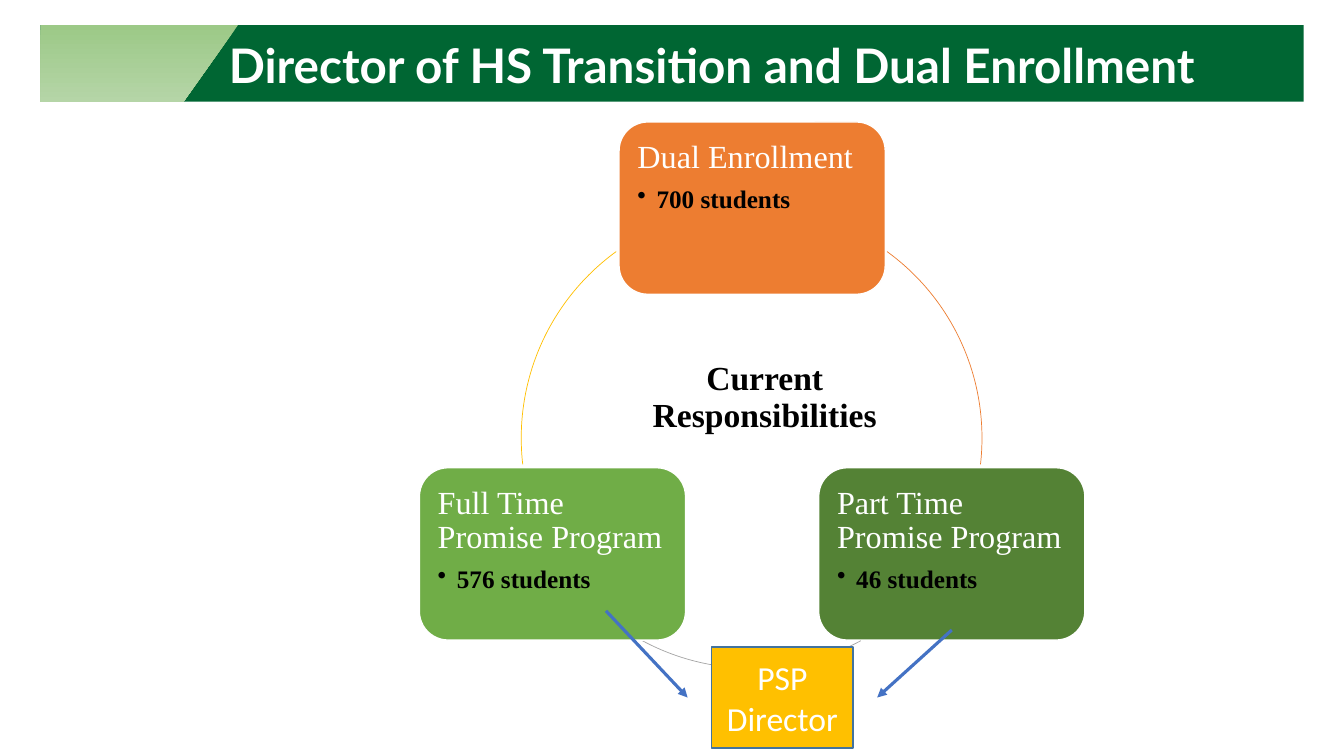
from lxml.etree import SubElement
from pptx import Presentation
from pptx.dml.color import RGBColor
from pptx.enum.shapes import MSO_CONNECTOR, MSO_SHAPE
from pptx.enum.text import MSO_ANCHOR, PP_ALIGN
from pptx.oxml.ns import qn
from pptx.util import Emu, Pt

EMU_PER_PX = 9144  # 100 px to the inch

WHITE = RGBColor(0xFF, 0xFF, 0xFF)
BLACK = RGBColor(0x00, 0x00, 0x00)
BANNER_GREEN = RGBColor(0x00, 0x66, 0x33)
PALE_GREEN = RGBColor(0xB5, 0xD5, 0xA7)
SOFT_GREEN = RGBColor(0x9C, 0xC9, 0x87)
ORANGE = RGBColor(0xED, 0x7D, 0x31)
DARK_GREEN = RGBColor(0x54, 0x82, 0x35)
GREEN = RGBColor(0x70, 0xAD, 0x47)
GRAY = RGBColor(0xA5, 0xA5, 0xA5)
GOLD = RGBColor(0xFF, 0xC0, 0x00)
BLUE = RGBColor(0x44, 0x72, 0xC4)
BOX_BLUE = RGBColor(0x43, 0x73, 0x9E)

SERIF = "Times New Roman"
CARD_SIZE = (264, 171)
RING_BOX = (517, 206, 457, 457)


def px(*lengths):
    return [Emu(length * EMU_PER_PX) for length in lengths]


def style_shape(shape, fill=None, line=None, line_width=1):
    shape.shadow.inherit = False
    if fill is None:
        shape.fill.background()
    else:
        shape.fill.solid()
        shape.fill.fore_color.rgb = fill
    if line is None:
        shape.line.fill.background()
    else:
        shape.line.color.rgb = line
        shape.line.width = Pt(line_width)


def add_box(slide, kind, box, **style):
    shape = slide.shapes.add_shape(kind, *px(*box))
    style_shape(shape, **style)
    return shape


def write_text(paragraph, text, *, size, font, color, bold=False,
               align=PP_ALIGN.LEFT, line_spacing=0.9, space_after=0, bullet=False):
    paragraph.text = text
    paragraph.alignment = align
    paragraph.line_spacing = line_spacing
    paragraph.space_after = Pt(space_after)
    paragraph.font.size = Pt(size)
    paragraph.font.name = font
    paragraph.font.color.rgb = color
    paragraph.font.bold = bold
    if bullet:
        properties = paragraph._p.get_or_add_pPr()
        indent = px(19)[0]
        properties.set("marL", str(indent))
        properties.set("indent", str(-indent))
        mark = SubElement(properties, qn("a:buChar"))
        mark.set("char", "•")
        properties.append(properties.find(qn("a:defRPr")))


def add_label(slide, box, text, **text_format):
    label = slide.shapes.add_textbox(*px(*box))
    frame = label.text_frame
    frame.word_wrap = True
    frame.vertical_anchor = MSO_ANCHOR.MIDDLE
    write_text(frame.paragraphs[0], text, align=PP_ALIGN.CENTER, **text_format)


def add_card(slide, position, fill, heading, count):
    card = add_box(slide, MSO_SHAPE.ROUNDED_RECTANGLE, position + CARD_SIZE,
                   fill=fill, line=WHITE)
    frame = card.text_frame
    frame.word_wrap = True
    frame.vertical_anchor = MSO_ANCHOR.TOP
    (frame.margin_left, frame.margin_top,
     frame.margin_right, frame.margin_bottom) = px(10, 10, 10, 10)
    write_text(frame.paragraphs[0], heading, size=23, font=SERIF, color=WHITE,
               space_after=8)
    write_text(frame.add_paragraph(), count, size=18, font=SERIF, color=BLACK,
               bold=True, space_after=3, bullet=True)


def add_ring_arc(slide, start, end, color):
    """Draw part of the ring; angles are degrees clockwise from the right."""
    arc = add_box(slide, MSO_SHAPE.ARC, RING_BOX, line=color, line_width=0.5)
    for index, degrees in enumerate((start, end)):
        arc.adjustments[index] = degrees * 0.6  # 60000 units a degree, scaled by 100000


def add_arrow(slide, start, end):
    arrow = slide.shapes.add_connector(MSO_CONNECTOR.STRAIGHT, *px(*start, *end))
    arrow.line.color.rgb = BLUE
    arrow.line.width = Pt(2.25)
    SubElement(arrow.line._get_or_add_ln(), qn("a:tailEnd")).set("type", "triangle")
    SubElement(arrow._element.spPr, qn("a:effectLst"))


def add_banner(slide):
    add_box(slide, MSO_SHAPE.RECTANGLE, (40, 25, 1253, 76), fill=BANNER_GREEN)
    add_label(slide, (131, 39, 1150, 58), "Director of HS Transition and Dual Enrollment",
              size=34, font="Lato", color=WHITE, bold=True)
    builder = slide.shapes.build_freeform(40, 25, scale=EMU_PER_PX)
    builder.add_line_segments([(236, 25), (182, 101), (40, 101)], close=True)
    corner = builder.convert_to_shape()
    style_shape(corner)
    corner.fill.gradient()
    corner.fill.gradient_angle = 270
    for stop, color in zip(corner.fill.gradient_stops, (SOFT_GREEN, PALE_GREEN)):
        stop.color.rgb = color


def add_director_box(slide):
    director = add_box(slide, MSO_SHAPE.RECTANGLE, (706, 642, 140, 100),
                       fill=GOLD, line=BOX_BLUE)
    frame = director.text_frame
    frame.word_wrap = True
    frame.vertical_anchor = MSO_ANCHOR.MIDDLE
    write_text(frame.paragraphs[0], "PSP Director", size=24, font="Calibri",
               color=WHITE, align=PP_ALIGN.CENTER, line_spacing=1.0)


def main():
    presentation = Presentation()
    presentation.slide_width, presentation.slide_height = px(1333, 750)
    slide = presentation.slides.add_slide(presentation.slide_layouts[6])

    add_card(slide, (614, 121), ORANGE, "Dual Enrollment", "700 students")
    add_ring_arc(slide, 306, 6.6, ORANGE)
    add_card(slide, (812, 464), DARK_GREEN, "Part Time Promise Program", "46 students")
    add_ring_arc(slide, 61.7, 118.3, GRAY)
    add_card(slide, (416, 464), GREEN, "Full Time Promise Program", "576 students")
    add_ring_arc(slide, 173.4, 234, GOLD)
    add_label(slide, (503, 267, 511, 256), "Current\vResponsibilities",
              size=24, font=SERIF, color=BLACK, bold=True)

    add_banner(slide)
    add_arrow(slide, (601, 606), (682, 692))
    add_director_box(slide)
    add_arrow(slide, (944, 625), (870, 692))

    presentation.save("out.pptx")


if __name__ == "__main__":
    main()
